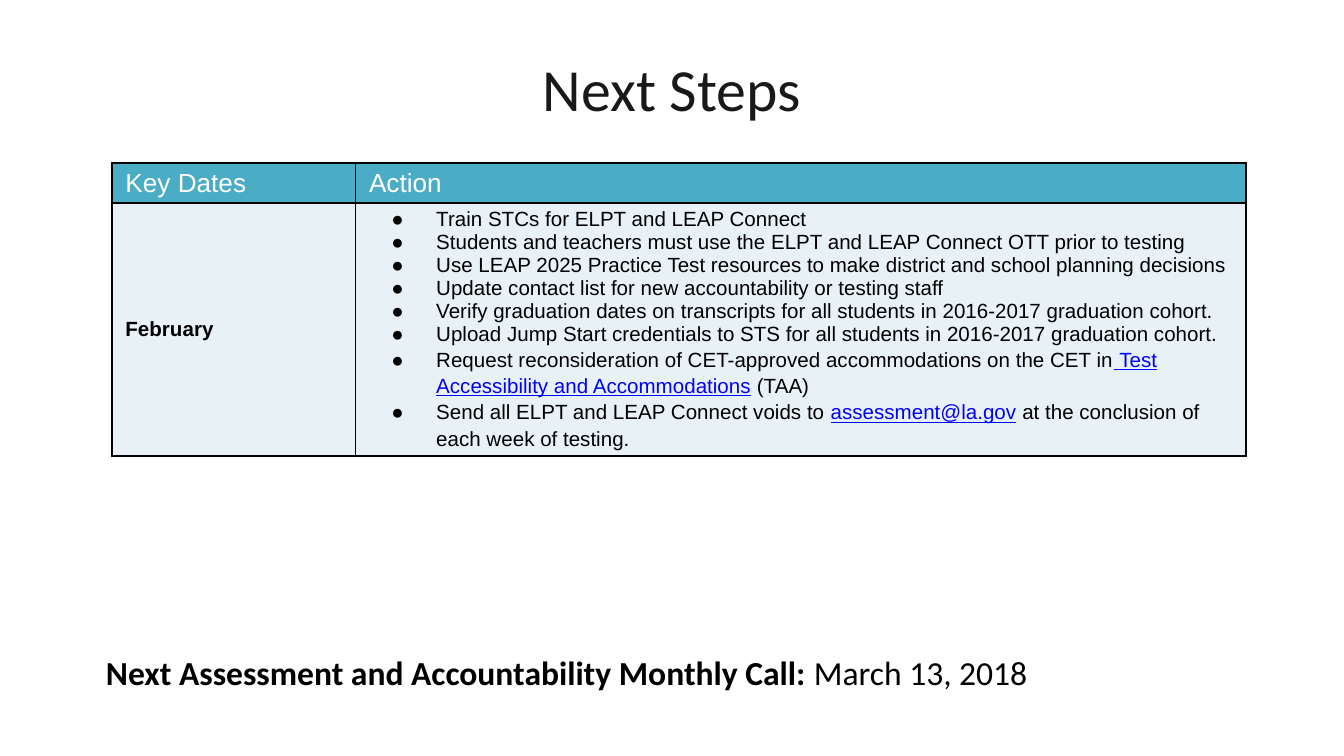
from lxml import etree
from pptx import Presentation
from pptx.dml.color import RGBColor
from pptx.enum.text import MSO_ANCHOR, PP_ALIGN
from pptx.oxml.ns import qn
from pptx.util import Pt

MIDDLE = MSO_ANCHOR.MIDDLE
CENTER = PP_ALIGN.CENTER
COLORS = {"title": "191919", "text": "000000", "head": "4BACC6",
          "body": "E8F1F5", "white": "FFFFFF", "link": "0000FF"}
LINK = {"color": "link", "line": True}
BOLD = {"bold": True}

TITLE = "Next Steps"
HEADS = ["Key Dates", "Action"]
MONTH = "February"
# Each action is a list of (text, format) runs.
TIGHT = [[(text, {})] for text in (
    "Train STCs for ELPT and LEAP Connect",
    "Students and teachers must use the ELPT and LEAP Connect OTT prior to testing",
    "Use LEAP 2025 Practice Test resources to make district and school planning decisions",
    "Update contact list for new accountability or testing staff",
    "Verify graduation dates on transcripts for all students in 2016-2017 graduation cohort.",
    "Upload Jump Start credentials to STS for all students in 2016-2017 graduation cohort.",
)]
LOOSE = [
    [("Request reconsideration of CET-approved accommodations on the CET in", {}),
     (" Test Accessibility and Accommodations", LINK), (" (TAA)", {})],
    [("Send all ELPT and LEAP Connect voids to ", {}), ("assessment@la.gov", LINK),
     (" at the conclusion of each week of testing.", {})],
]
CALL = [("Next Assessment and Accountability Monthly Call: ", BOLD),
        ("March 13, 2018", {})]

WIDTH, HEIGHT = 720, 405
COLS = [130.5, 477]
ROWS = [21.5, 135.5]
LEFT, TOP = 60, 87.25


def rgb(name):
    return RGBColor.from_string(COLORS[name])


def add_run(para, text, size=11, face="Arial", color="text", bold=False, line=False):
    run = para.add_run()
    run.text = text
    font = run.font
    font.size, font.name = Pt(size), face
    font.bold, font.underline = bold, line
    font.color.rgb = rgb(color)


def add_bullet(para):
    props = para._p.get_or_add_pPr()
    props.set("marL", str(Pt(36)))
    props.set("indent", str(Pt(-24)))
    tint = etree.SubElement(props, qn("a:buClr"))
    etree.SubElement(tint, qn("a:srgbClr"), val=COLORS["text"])
    etree.SubElement(props, qn("a:buFont"), typeface="Arial")
    etree.SubElement(props, qn("a:buChar"), char="●")


def style_cell(cell, fill, sides):
    """Set margins, anchor, borders and fill; sides gives left and right widths."""
    cell.vertical_anchor = MIDDLE
    cell.margin_left = cell.margin_right = Pt(7.2)
    cell.margin_top = cell.margin_bottom = Pt(2.7)
    props = cell._tc.get_or_add_tcPr()
    for side, width in zip("LRTB", (*sides, 1, 1)):
        edge = etree.SubElement(props, qn("a:ln" + side), w=str(Pt(width)))
        solid = etree.SubElement(edge, qn("a:solidFill"))
        etree.SubElement(solid, qn("a:srgbClr"), val=COLORS["text"])
    cell.fill.solid()
    cell.fill.fore_color.rgb = rgb(fill)


def add_title(slide):
    title = slide.shapes.title
    title.left, title.top = Pt(0), Pt(22.3)
    title.width, title.height = Pt(WIDTH), Pt(49.7)
    title.text_frame.vertical_anchor = MIDDLE
    para = title.text_frame.paragraphs[0]
    para.alignment = CENTER
    add_run(para, TITLE, size=32, face="Calibri", color="title")


def add_steps(slide):
    frame = slide.shapes.add_table(2, 2, Pt(LEFT), Pt(TOP), Pt(sum(COLS)), Pt(sum(ROWS)))
    table = frame.table
    table.first_row = table.horz_banding = False
    for col, width in zip(table.columns, COLS):
        col.width = Pt(width)
    for row, height, fill in zip(table.rows, ROWS, ("head", "body")):
        row.height = Pt(height)
        for cell, sides in zip(row.cells, ((1, 0.75), (0.75, 1))):
            style_cell(cell, fill, sides)

    for i, text in enumerate(HEADS):
        add_run(table.cell(0, i).text_frame.paragraphs[0], text, size=14, color="white")
    add_run(table.cell(1, 0).text_frame.paragraphs[0], MONTH, bold=True)

    box = table.cell(1, 1).text_frame
    for i, runs in enumerate(TIGHT + LOOSE):
        para = box.add_paragraph() if i else box.paragraphs[0]
        add_bullet(para)
        if runs in LOOSE:
            para.line_spacing = 1.15
        for text, style in runs:
            add_run(para, text, **style)


def add_call(slide):
    box = slide.shapes.add_textbox(Pt(49.7), Pt(345.6), Pt(632.9), Pt(28.8)).text_frame
    box.word_wrap = True
    for text, style in CALL:
        add_run(box.paragraphs[0], text, size=18, face="Calibri", **style)


def main():
    deck = Presentation()
    deck.slide_width, deck.slide_height = Pt(WIDTH), Pt(HEIGHT)
    slide = deck.slides.add_slide(deck.slide_layouts[5])
    add_title(slide)
    add_steps(slide)
    add_call(slide)
    deck.save("out.pptx")


if __name__ == "__main__":
    main()
